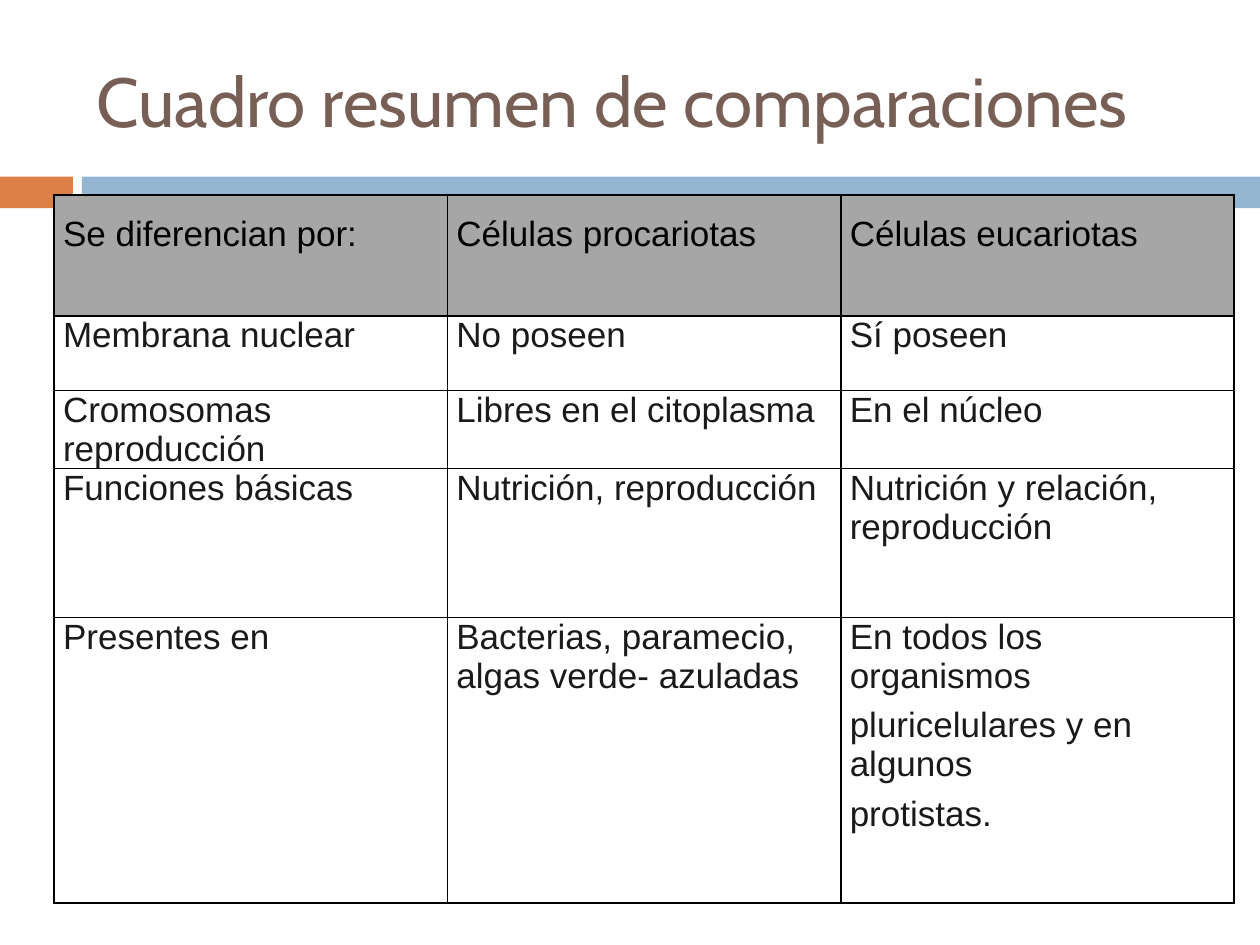
from lxml import etree
from pptx import Presentation
from pptx.dml.color import RGBColor
from pptx.enum.shapes import MSO_SHAPE
from pptx.enum.text import MSO_ANCHOR, MSO_AUTO_SIZE, PP_ALIGN
from pptx.oxml.ns import qn
from pptx.util import Cm, Pt

RECTANGLE = MSO_SHAPE.RECTANGLE
MIDDLE = MSO_ANCHOR.MIDDLE
NO_FIT = MSO_AUTO_SIZE.NONE
LEFT = PP_ALIGN.LEFT

COLUMN_WIDTH = 7.93
ROW_HEIGHTS = [2.44, 1.5, 1.5, 3.0, 5.76]
ROWS = [
    ["Se diferencian por:", "Células procariotas", "Células eucariotas"],
    ["Membrana nuclear", "No poseen", "Sí poseen"],
    ["Cromosomas reproducción", "Libres en el citoplasma", "En el núcleo"],
    ["Funciones básicas", "Nutrición, reproducción",
     "Nutrición y relación, reproducción"],
    ["Presentes en", "Bacterias, paramecio, algas verde- azuladas",
     "En todos los organismos\npluricelulares y en algunos\nprotistas."],
]


def color(value):
    """Turn a hex string into a colour."""
    return RGBColor.from_string(value)


def add_run(p, text, font, size, ink):
    """Add one formatted run to a paragraph."""
    r = p.add_run()
    r.text = text
    r.font.name = font
    r.font.size = Pt(size)
    r.font.bold = False
    r.font.color.rgb = color(ink)


def add_bar(s, left, width, fill):
    """Draw one segment of the band under the title."""
    sp = s.shapes.add_shape(RECTANGLE, Cm(left), Cm(3.56), Cm(width), Cm(0.64))
    sp.shadow.inherit = False
    sp.fill.solid()
    sp.fill.fore_color.rgb = color(fill)
    sp.line.fill.background()


def set_title(s, text):
    """Place and format the slide title."""
    sp = s.shapes.title
    sp.left, sp.top, sp.width, sp.height = Cm(1.7), Cm(0.64), Cm(22.66), Cm(2.74)
    tf = sp.text_frame
    tf.word_wrap = True
    tf.auto_size = NO_FIT
    tf.vertical_anchor = MIDDLE
    p = tf.paragraphs[0]
    p.alignment = LEFT
    add_run(p, text, "Cabin", 39.6, "775F55")


def set_borders(cell, ink, width):
    """Outline all four sides of a cell."""
    tc_pr = cell._tc.get_or_add_tcPr()
    for i, side in enumerate(("a:lnL", "a:lnR", "a:lnT", "a:lnB")):
        ln = etree.Element(qn(side), w=str(Pt(width)))
        fill = etree.SubElement(ln, qn("a:solidFill"))
        etree.SubElement(fill, qn("a:srgbClr"), val=ink)
        tc_pr.insert(i, ln)


def fill_cell(cell, text, header):
    """Write and format one table cell."""
    cell.margin_left = cell.margin_right = Cm(0.18)
    cell.margin_top = cell.margin_bottom = Cm(0)
    if header:
        cell.fill.solid()
        cell.fill.fore_color.rgb = color("A6A6A6")
    else:
        cell.fill.background()
    set_borders(cell, "000000", 1)
    tf = cell.text_frame
    for i, line in enumerate(text.split("\n")):
        p = tf.add_paragraph() if i else tf.paragraphs[0]
        p.space_before = Pt(6)
        if header:
            p.line_spacing = 1.5
        add_run(p, line, "Arial", 20, "000000" if header else "1A1A1A")


def add_comparison(s):
    """Add the comparison table."""
    columns = len(ROWS[0])
    table = s.shapes.add_table(
        len(ROWS), columns, Cm(1.09), Cm(3.93),
        Cm(COLUMN_WIDTH * columns), Cm(sum(ROW_HEIGHTS))).table
    table.first_row = False
    table.horz_banding = False
    for column in table.columns:
        column.width = Cm(COLUMN_WIDTH)
    for i, (height, texts) in enumerate(zip(ROW_HEIGHTS, ROWS)):
        table.rows[i].height = Cm(height)
        for j, text in enumerate(texts):
            fill_cell(table.cell(i, j), text, header=i == 0)


def main():
    """Build the slide and save it."""
    prs = Presentation()
    prs.slide_width, prs.slide_height = Cm(25.4), Cm(19.05)
    s = prs.slides.add_slide(prs.slide_layouts[5])
    add_bar(s, 0, 1.47, "DD8047")
    add_bar(s, 1.65, 23.75, "94B6D2")
    set_title(s, "Cuadro resumen de comparaciones")
    add_comparison(s)
    prs.save("out.pptx")


if __name__ == "__main__":
    main()
